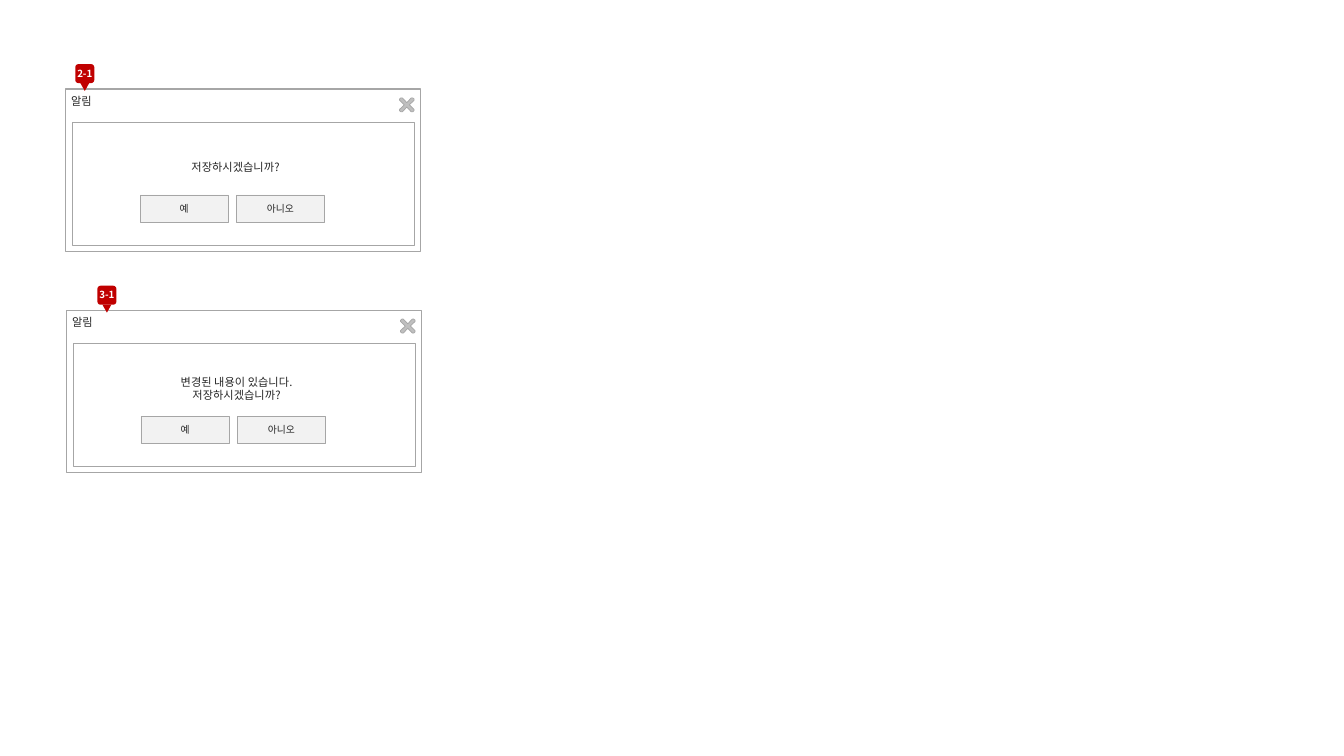
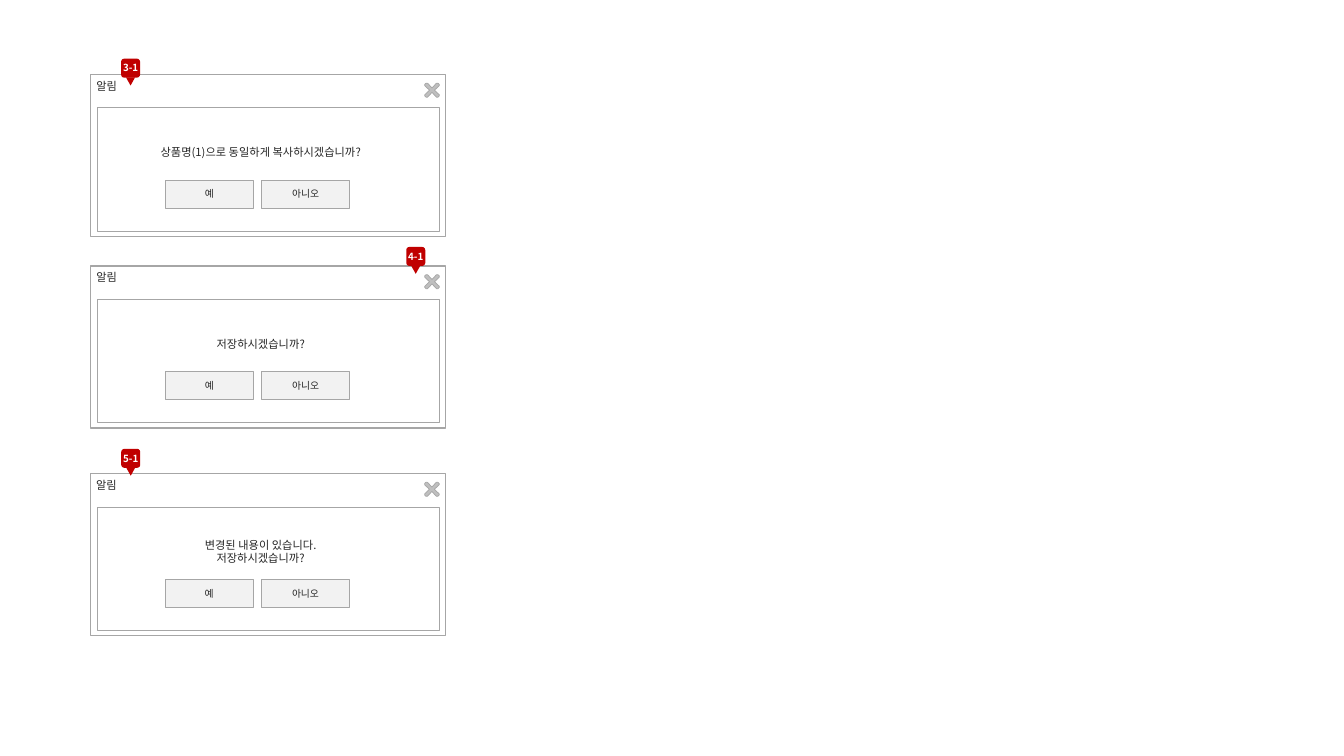
import lxml.etree
import pptx
import pptx.dml.color
import pptx.enum.shapes
import pptx.enum.text
import pptx.oxml.ns
import pptx.util

Pt = pptx.util.Pt
RGBColor = pptx.dml.color.RGBColor
Shape = pptx.enum.shapes.MSO_SHAPE
Align = pptx.enum.text.PP_ALIGN
Anchor = pptx.enum.text.MSO_ANCHOR
AutoSize = pptx.enum.text.MSO_AUTO_SIZE

WHITE = RGBColor(0xFF, 0xFF, 0xFF)
BORDER = RGBColor(0xA6, 0xA6, 0xA6)
BUTTON_FILL = RGBColor(0xF2, 0xF2, 0xF2)
ICON_FILL = RGBColor(0xBF, 0xBF, 0xBF)
TEXT = RGBColor(0x26, 0x26, 0x26)
MARKER = RGBColor(0xC0, 0x00, 0x00)
FONT = "Noto Sans CJK KR"

DIALOG_SIZE = (253.5, 116)
BUTTON_SIZE = (63, 19.8)
BUTTON_LEFT, BUTTON_TOP, BUTTON_PITCH = 53.2, 75.6, 68.8
BUTTONS = ["예", "아니오"]
SAVE = ["저장하시겠습니까?"]
CHANGED = ["변경된 내용이 있습니다.", *SAVE]
COPY = ["상품명(1)으로 동일하게 복사하시겠습니까?"]

# Each dialog: left, top, message lines, marker label, marker left, marker top
PAGES = [
    [
        (46.8, 63.6, SAVE, "2-1", 53.8, 45.8),
        (47.5, 221.6, CHANGED, "3-1", 69.6, 204.1),
    ],
    [
        (64.8, 53.1, COPY, "3-1", 86.5, 41.9),
        (64.8, 189.9, SAVE, "4-1", 290.2, 176.4),
        (64.7, 338.2, CHANGED, "5-1", 86.6, 320.6),
    ],
]

# Upper left arm of the close icon, from the left notch to the top notch
ICON_ARM = [(-4.7, -2.8), (-5.2, -3.3), (-5.2, -4.1), (-4.7, -4.6),
            (-4.2, -5), (-3.3, -5), (-2.8, -4.6)]
ICON_NOTCH_X, ICON_NOTCH_Y = 1.8, 1.6


def paint(shape, fill, line_width=0):
    shape.shadow.inherit = False
    shape.fill.solid()
    shape.fill.fore_color.rgb = fill
    if line_width:
        shape.line.color.rgb = BORDER
        shape.line.width = Pt(line_width)
    else:
        shape.line.fill.background()


def add_box(shapes, kind, box, fill, line_width=0):
    shape = shapes.add_shape(kind, *map(Pt, box))
    paint(shape, fill, line_width)
    return shape


def write(shape, lines, size, align=Align.CENTER, color=TEXT, bold=None, **frame_format):
    """Fill a shape with one paragraph per line; frame_format sets the text frame."""
    frame = shape.text_frame
    for name, value in {"word_wrap": True, **frame_format}.items():
        setattr(frame, name, value)
    frame.text = "\n".join(lines)
    for para in frame.paragraphs:
        para.alignment = align
        for span in para.runs:
            for name, value in {"name": FONT, "size": Pt(size), "bold": bold}.items():
                setattr(span.font, name, value)
            span.font.color.rgb = color
            east_asian = lxml.etree.SubElement(
                span.font._element, pptx.oxml.ns.qn("a:ea"))
            east_asian.set("typeface", FONT)


def add_label(shapes, box, lines, size, insets, **text_format):
    label = shapes.add_textbox(*map(Pt, box))
    sides = ("margin_left", "margin_top", "margin_right", "margin_bottom")
    margins = dict(zip(sides, map(Pt, insets)))
    write(label, lines, size, **margins, **text_format)


def add_close_icon(page, center_x, center_y):
    points = []
    for sign_x, sign_y, notch in [
        (1, 1, (0, -ICON_NOTCH_Y)),
        (-1, 1, (ICON_NOTCH_X, 0)),
        (-1, -1, (0, ICON_NOTCH_Y)),
        (1, -1, (-ICON_NOTCH_X, 0)),
    ]:
        arm = [(x * sign_x, y * sign_y) for x, y in ICON_ARM]
        points += arm if sign_x == sign_y else arm[::-1]
        points.append(notch)
    outline = [(Pt(center_x + x), Pt(center_y + y)) for x, y in points]
    builder = page.shapes.build_freeform(*outline[0], scale=1.0)
    builder.add_line_segments(outline[1:], close=True)
    paint(builder.convert_to_shape(), ICON_FILL, 0.5)


def add_dialog(page, left, top, message):
    width, height = DIALOG_SIZE
    add_box(page.shapes, Shape.RECTANGLE, (left, top, width, height), WHITE, 1)
    add_box(page.shapes, Shape.RECTANGLE,
            (left + 5, top + 24, width - 9.5, height - 28), WHITE, 0.75)
    for index, caption in enumerate(BUTTONS):
        box = (left + BUTTON_LEFT + index * BUTTON_PITCH, top + BUTTON_TOP, *BUTTON_SIZE)
        button = add_box(page.shapes, Shape.ROUNDED_RECTANGLE, box, BUTTON_FILL, 0.5)
        button.adjustments[0] = 0
        write(button, [caption], 7, word_wrap=False, vertical_anchor=Anchor.MIDDLE)
    add_close_icon(page, left + width - 9.7, top + 11.3)
    insets = (4, 2, 4, 2)
    add_label(page.shapes, (left + 8, top + 36, 227, 39.6), message, 8, insets,
              vertical_anchor=Anchor.MIDDLE)
    add_label(page.shapes, (left, top + 1.4, 34, 15), ["알림"], 8, insets,
              align=Align.LEFT)


def add_marker(page, left, top, number):
    """Draw a numbered pin that points down."""
    shapes = page.shapes.add_group_shape().shapes
    tip = add_box(shapes, Shape.ISOSCELES_TRIANGLE,
                  (left + 3.5, top + 13.4, 6.5, 5.8), MARKER)
    tip.rotation = 180
    add_box(shapes, Shape.ROUNDED_RECTANGLE, (left, top, 13.6, 13.6), MARKER)
    add_label(shapes, (left - 3, top - 1.1, 19.6, 15.8), [number], 7, [3.6] * 4,
              color=WHITE, bold=True, auto_size=AutoSize.SHAPE_TO_FIT_TEXT)


def main():
    deck = pptx.Presentation()
    deck.slide_width, deck.slide_height = Pt(960), Pt(540)
    for dialogs in PAGES:
        page = deck.slides.add_slide(deck.slide_layouts[6])
        for left, top, message, number, marker_left, marker_top in dialogs:
            add_dialog(page, left, top, message)
            add_marker(page, marker_left, marker_top, number)
    deck.save("out.pptx")


if __name__ == "__main__":
    main()
